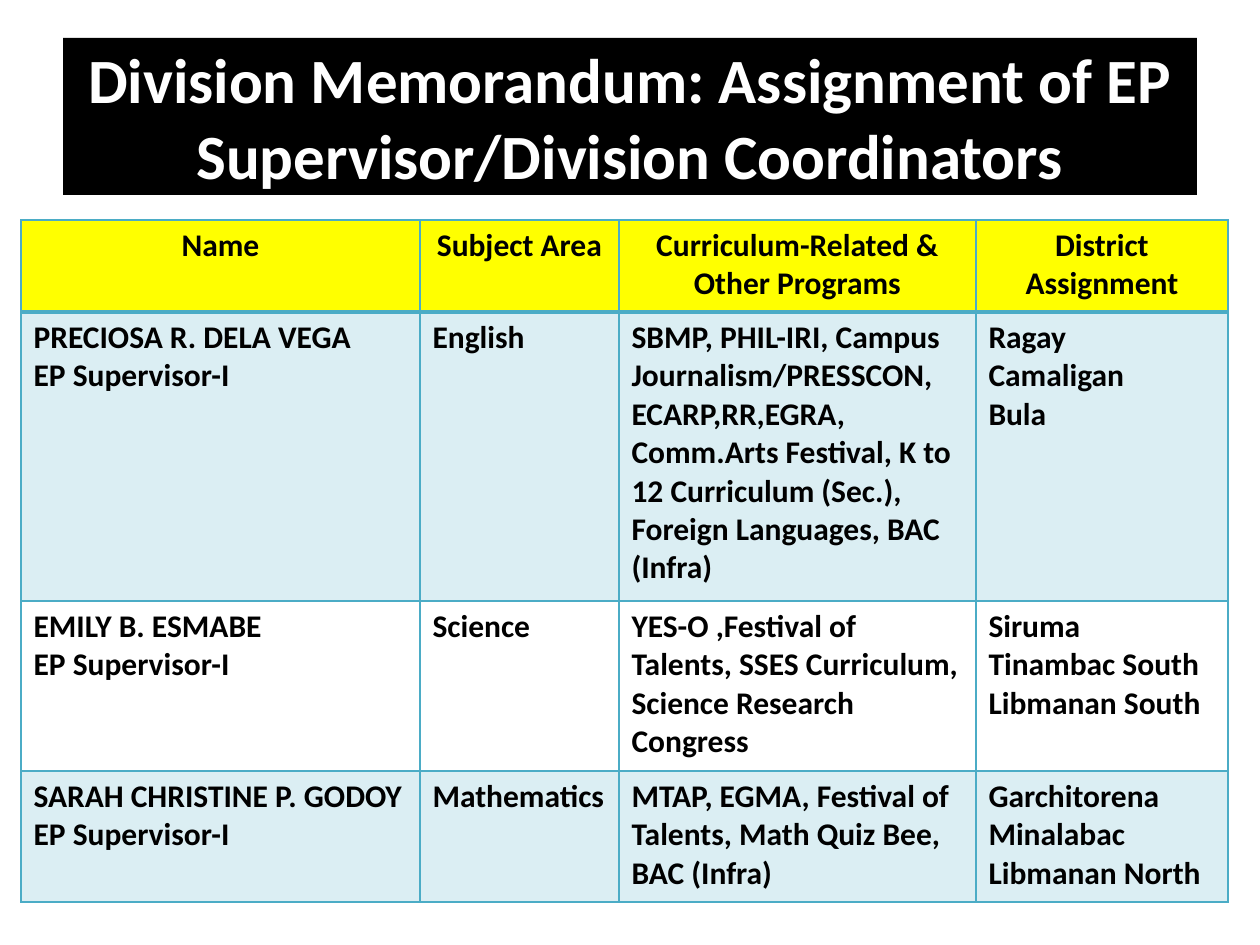
"""Build the slide that lists supervisors and their assignments."""
from lxml import etree
from pptx import Presentation
from pptx.dml.color import RGBColor
from pptx.enum.text import MSO_ANCHOR, PP_ALIGN
from pptx.oxml.ns import qn
from pptx.util import Pt

CENTER, LEFT = PP_ALIGN.CENTER, PP_ALIGN.LEFT
MIDDLE = MSO_ANCHOR.MIDDLE
PX = 914400 / 126
FONT = "Calibri"
BLACK, WHITE, YELLOW, TEAL = "000000", "FFFFFF", "FFFF00", "4BACC6"

TITLE = "Division Memorandum: Assignment of EP Supervisor/Division Coordinators"
ROLE = "EP Supervisor-I"
ROWS = [
    ("Name", "Subject Area", "Curriculum-Related & Other Programs",
     "District Assignment"),
    (f"PRECIOSA R. DELA VEGA\n{ROLE}", "English",
     "SBMP, PHIL-IRI, Campus Journalism/PRESSCON, ECARP,RR,EGRA, "
     "Comm.Arts Festival, K to 12 Curriculum (Sec.), Foreign Languages, "
     "BAC (Infra)",
     "Ragay\nCamaligan\nBula"),
    (f"EMILY B. ESMABE\n{ROLE}", "Science",
     "YES-O ,Festival of Talents, SSES Curriculum, Science Research Congress",
     "Siruma\nTinambac South\nLibmanan South"),
    (f"SARAH CHRISTINE P. GODOY\n{ROLE}", "Mathematics",
     "MTAP, EGMA, Festival of Talents, Math Quiz Bee, BAC (Infra)",
     "Garchitorena\nMinalabac\nLibmanan North"),
]
WIDTHS = (399, 199, 357, 252)
HEIGHTS = (92, 289, 170, 131)


def px(*vals):
    return [round(val * PX) for val in vals]


def color(code):
    return RGBColor.from_string(code)


def write(frame, text, size, code, align):
    frame.text = text
    for para in frame.paragraphs:
        para.alignment = align
        font = para.font
        font.name, font.size, font.bold = FONT, Pt(size), True
        font.color.rgb = color(code)


def paint(fill, code, alpha=None):
    fill.solid()
    fill.fore_color.rgb = color(code)
    return fill


def border(cell, sides):
    props = cell._tc.get_or_add_tcPr()
    for side, width in sides.items():
        line = etree.SubElement(props, qn(f"a:ln{side}"), w=str(Pt(width)))
        solid = etree.SubElement(line, qn("a:solidFill"))
        etree.SubElement(solid, qn("a:srgbClr"), val=TEAL)


def shade(cell, row):
    if row == 0:
        paint(cell.fill, YELLOW)
    elif row % 2:
        paint(cell.fill, TEAL)
        tint = cell._tc.tcPr.find(f"{qn('a:solidFill')}/{qn('a:srgbClr')}")
        etree.SubElement(tint, qn("a:alpha"), val="20000")
    else:
        cell.fill.background()


def add_title(slide):
    title = slide.shapes.title
    title.left, title.top, title.width, title.height = px(63, 38, 1134, 157)
    paint(title.fill, BLACK)
    write(title.text_frame, TITLE, 36, WHITE, CENTER)
    title.text_frame.vertical_anchor = MIDDLE


def add_grid(slide):
    box = px(21, 220, sum(WIDTHS), sum(HEIGHTS))
    table = slide.shapes.add_table(len(ROWS), len(WIDTHS), *box).table
    for col, width in zip(table.columns, px(*WIDTHS)):
        col.width = width
    for row, height in zip(table.rows, px(*HEIGHTS)):
        row.height = height
    for r, texts in enumerate(ROWS):
        sides = {"L": 1, "R": 1, "T": 2 if r == 1 else 1,
                 "B": 2 if r == 0 else 1}
        for c, text in enumerate(texts):
            cell = table.cell(r, c)
            border(cell, sides)
            shade(cell, r)
            write(cell.text_frame, text, 18, BLACK, LEFT if r else CENTER)


def main():
    deck = Presentation()
    deck.slide_width, deck.slide_height = px(1260, 945)
    slide = deck.slides.add_slide(deck.slide_layouts[5])
    add_title(slide)
    add_grid(slide)
    deck.save("out.pptx")


if __name__ == "__main__":
    main()
